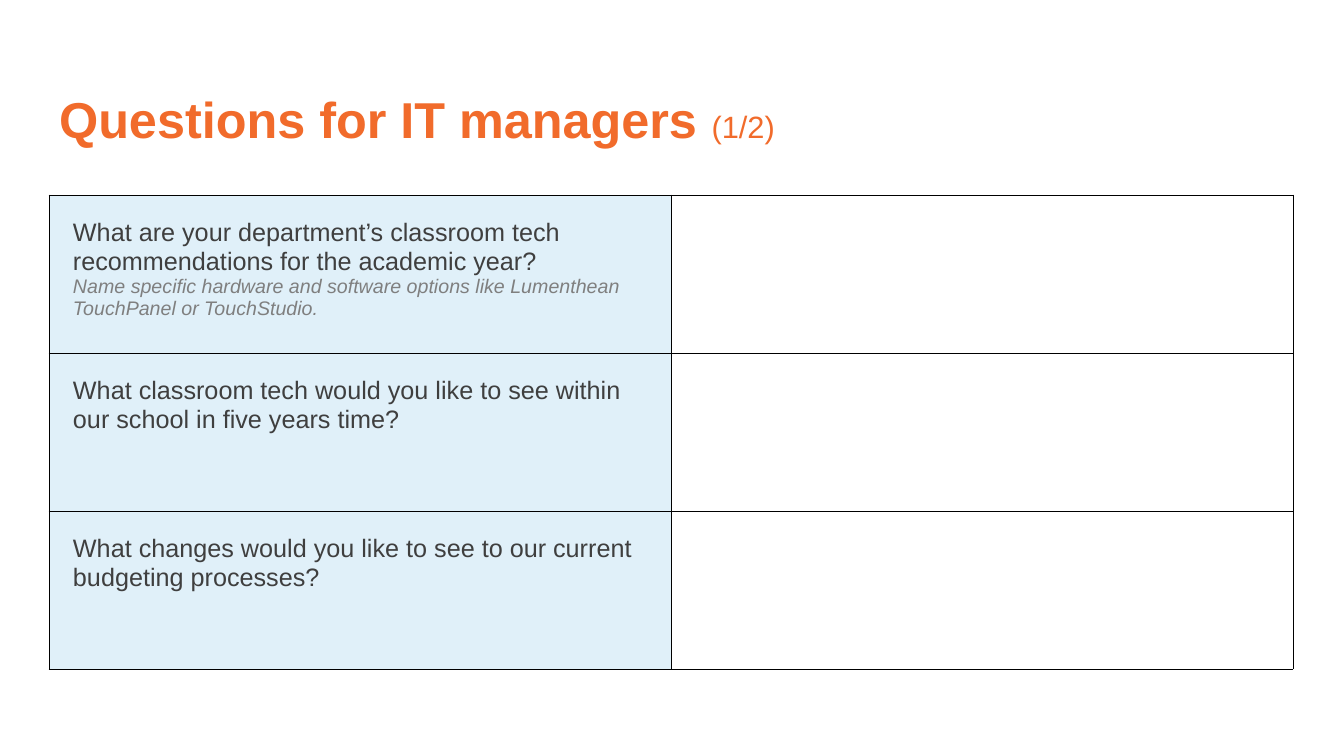
from lxml import etree
from pptx import Presentation
from pptx.dml.color import RGBColor
from pptx.enum.text import MSO_ANCHOR, MSO_AUTO_SIZE, PP_ALIGN
from pptx.oxml.ns import qn
from pptx.util import Pt

LEFT = PP_ALIGN.LEFT
MIDDLE = MSO_ANCHOR.MIDDLE
TOP = MSO_ANCHOR.TOP
NO_FIT = MSO_AUTO_SIZE.NONE

TITLE = "Questions for IT managers "
PAGE = "(1/2)"
QUESTIONS = [
    ("What are your department’s classroom tech recommendations for the academic year?",
     "Name specific hardware and software options like Lumenthean TouchPanel or TouchStudio."),
    ("What classroom tech would you like to see within our school in five years time?", None),
    ("What changes would you like to see to our current budgeting processes?", None),
]

COLORS = {
    "title": "F16B2B",
    "question": "3F3F3F",
    "hint": "7F7F7F",
    "question_fill": "E0F0F9",
    "answer_fill": "FFFFFF",
    "border": "000000",
}
FONT = "Arial"
EMU_PER_PX = 914400 / 100.8
SLIDE_WIDTH, SLIDE_HEIGHT = 1344, 756
MARGIN = 49
TITLE_WIDTH, TITLE_HEIGHT = 1159, 146
TABLE_TOP = MARGIN + TITLE_HEIGHT
COLUMN_WIDTH, ROW_HEIGHT = 622, 158
COLUMNS = 2
CELL_PADDING = 24


def px(length):
    return round(length * EMU_PER_PX)


def add_text(paragraph, text, size, color, bold=False, italic=False):
    run = paragraph.add_run()
    run.text = text
    run.font.name = FONT
    run.font.size = Pt(size)
    run.font.bold = bold
    run.font.italic = italic
    run.font.color.rgb = RGBColor.from_string(COLORS[color])


def fill_cell(cell, color):
    cell.fill.solid()
    cell.fill.fore_color.rgb = RGBColor.from_string(COLORS[color])
    properties = cell._tc.get_or_add_tcPr()
    for position, side in enumerate(("lnL", "lnR", "lnT", "lnB")):
        line = etree.Element(qn(f"a:{side}"), w=str(Pt(0.75)))
        solid = etree.SubElement(line, qn("a:solidFill"))
        etree.SubElement(solid, qn("a:srgbClr"), val=COLORS["border"])
        properties.insert(position, line)


def add_title(slide):
    title = slide.shapes.title
    title.left, title.top = px(MARGIN), px(MARGIN)
    title.width, title.height = px(TITLE_WIDTH), px(TITLE_HEIGHT)
    frame = title.text_frame
    frame.auto_size = NO_FIT
    frame.vertical_anchor = MIDDLE
    paragraph = frame.paragraphs[0]
    paragraph.alignment = LEFT
    paragraph.line_spacing = 0.9
    add_text(paragraph, TITLE, 36, "title", bold=True)
    add_text(paragraph, PAGE, 22, "title")


def add_questions(slide):
    table = slide.shapes.add_table(
        len(QUESTIONS), COLUMNS, px(MARGIN), px(TABLE_TOP),
        px(COLUMN_WIDTH * COLUMNS), px(ROW_HEIGHT * len(QUESTIONS))).table
    table.first_row = False
    table.horz_banding = False
    for column in table.columns:
        column.width = px(COLUMN_WIDTH)
    for row, (question, hint) in zip(table.rows, QUESTIONS):
        row.height = px(ROW_HEIGHT)
        question_cell, answer_cell = row.cells
        fill_cell(question_cell, "question_fill")
        fill_cell(answer_cell, "answer_fill")
        question_cell.vertical_anchor = TOP
        question_cell.margin_left = question_cell.margin_right = px(CELL_PADDING)
        question_cell.margin_top = question_cell.margin_bottom = px(CELL_PADDING)
        paragraph = question_cell.text_frame.paragraphs[0]
        add_text(paragraph, question, 18, "question")
        if hint:
            paragraph.add_line_break()
            add_text(paragraph, hint, 14, "hint", italic=True)


def main():
    presentation = Presentation()
    presentation.slide_width = px(SLIDE_WIDTH)
    presentation.slide_height = px(SLIDE_HEIGHT)
    slide = presentation.slides.add_slide(presentation.slide_layouts[5])
    add_title(slide)
    add_questions(slide)
    presentation.save("out.pptx")


if __name__ == "__main__":
    main()
